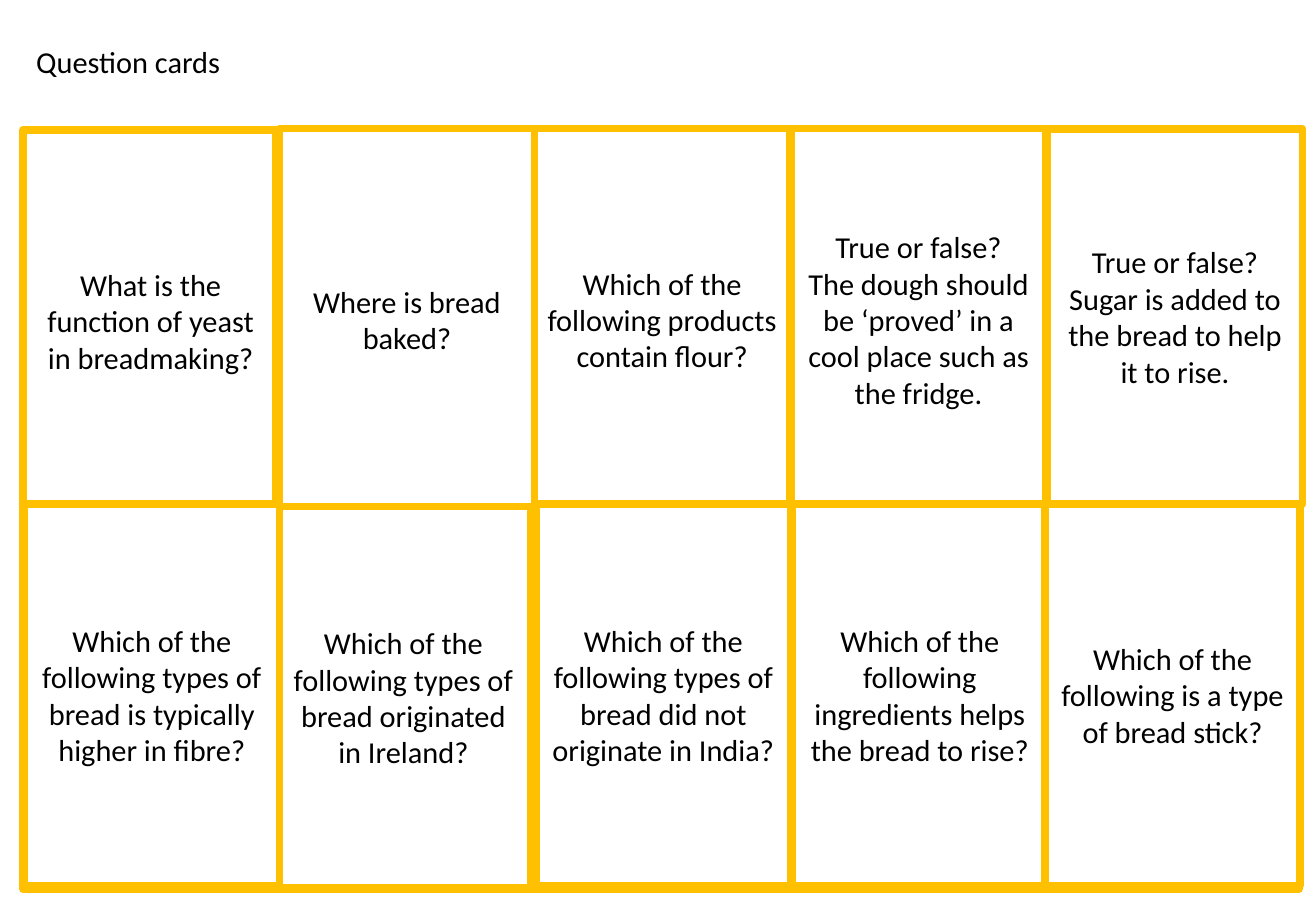
from pptx import Presentation
from pptx.dml.color import RGBColor
from pptx.enum.shapes import MSO_CONNECTOR, MSO_SHAPE
from pptx.enum.text import MSO_ANCHOR, MSO_AUTO_SIZE, PP_ALIGN
from pptx.util import Inches, Pt
from lxml.etree import SubElement
from pptx.oxml.ns import qn

WHITE = RGBColor(0xFF, 0xFF, 0xFF)
BLACK = RGBColor(0x00, 0x00, 0x00)
AMBER = RGBColor(0xFF, 0xC0, 0x00)

COLUMNS = 5
GRID_LEFT = 0.19
ROW_TOPS = (1.07, 4.18)
CARD_WIDTH = 2.1
CARD_HEIGHT = 3.14
DIVIDER_HEIGHT = 6.25

FIRST_QUESTION = "What is the function of yeast in breadmaking?"
QUESTIONS = [
    (2.3, 1.06, CARD_HEIGHT, "Where is bread baked?"),
    (4.4, 1.06, CARD_HEIGHT, "Which of the following products contain flour?"),
    (6.51, 1.06, CARD_HEIGHT,
     "True or false?\nThe dough should be ‘proved’ in a cool place such as the fridge."),
    (2.27, 4.17, CARD_HEIGHT,
     "Which of the following types of bread originated in Ireland?"),
    (0.2, 4.15, CARD_HEIGHT,
     "Which of the following types of bread is typically higher in fibre?"),
    (4.41, 4.15, CARD_HEIGHT,
     "Which of the following types of bread did not originate in India?"),
    (6.52, 4.15, CARD_HEIGHT,
     "Which of the following ingredients helps the bread to rise?"),
    (8.6, 4.15, CARD_HEIGHT, "Which of the following is a type of bread stick?"),
    (8.62, 1.06, 3.09,
     "True or false?\nSugar is added to the bread to help it to rise."),
]
DIVIDER_STARTS = [(2.3, 1.08), (8.6, 1.07), (6.49, 1.07), (4.39, 1.09)]


def write_text(text_frame, text, alignment):
    text_frame.text = text
    for paragraph in text_frame.paragraphs:
        paragraph.alignment = alignment
        for run in paragraph.runs:
            run.font.name = "Calibri"
            run.font.size = Pt(18)
            run.font.color.rgb = BLACK


def add_card(slide, left, top, height=CARD_HEIGHT, question=""):
    card = slide.shapes.add_shape(
        MSO_SHAPE.RECTANGLE, Inches(left), Inches(top),
        Inches(CARD_WIDTH), Inches(height))
    card.shadow.inherit = False
    card.fill.solid()
    card.fill.fore_color.rgb = WHITE
    card.line.color.rgb = AMBER
    card.line.width = Pt(4.5)
    if question:
        card.text_frame.vertical_anchor = MSO_ANCHOR.MIDDLE
        write_text(card.text_frame, question, PP_ALIGN.CENTER)


def add_divider(shapes, start_x, start_y, end_x, end_y):
    divider = shapes.add_connector(
        MSO_CONNECTOR.STRAIGHT, Inches(start_x), Inches(start_y),
        Inches(end_x), Inches(end_y))
    divider.line.color.rgb = AMBER
    divider.line.width = Pt(9)
    SubElement(divider._element.spPr, qn("a:effectLst"))


def add_heading(slide, text):
    heading = slide.shapes.add_textbox(
        Inches(0.2), Inches(0.31), Inches(1.73), Inches(0.4))
    heading.text_frame.word_wrap = False
    heading.text_frame.auto_size = MSO_AUTO_SIZE.SHAPE_TO_FIT_TEXT
    write_text(heading.text_frame, text, PP_ALIGN.LEFT)


def main():
    presentation = Presentation()
    presentation.slide_width = Inches(10.83)
    presentation.slide_height = Inches(7.5)
    slide = presentation.slides.add_slide(presentation.slide_layouts[6])

    for column in range(COLUMNS):
        for row, top in enumerate(ROW_TOPS):
            question = FIRST_QUESTION if column == row == 0 else ""
            add_card(slide, GRID_LEFT + column * CARD_WIDTH, top, question=question)

    dividers = slide.shapes.add_group_shape()
    for left, top in DIVIDER_STARTS:
        add_divider(dividers.shapes, left, top, left, top + DIVIDER_HEIGHT)
    add_divider(dividers.shapes, 10.7, ROW_TOPS[1], GRID_LEFT, ROW_TOPS[1])

    for left, top, height, question in QUESTIONS:
        add_card(slide, left, top, height, question)

    add_heading(slide, "Question cards")
    presentation.save("out.pptx")


if __name__ == "__main__":
    main()
